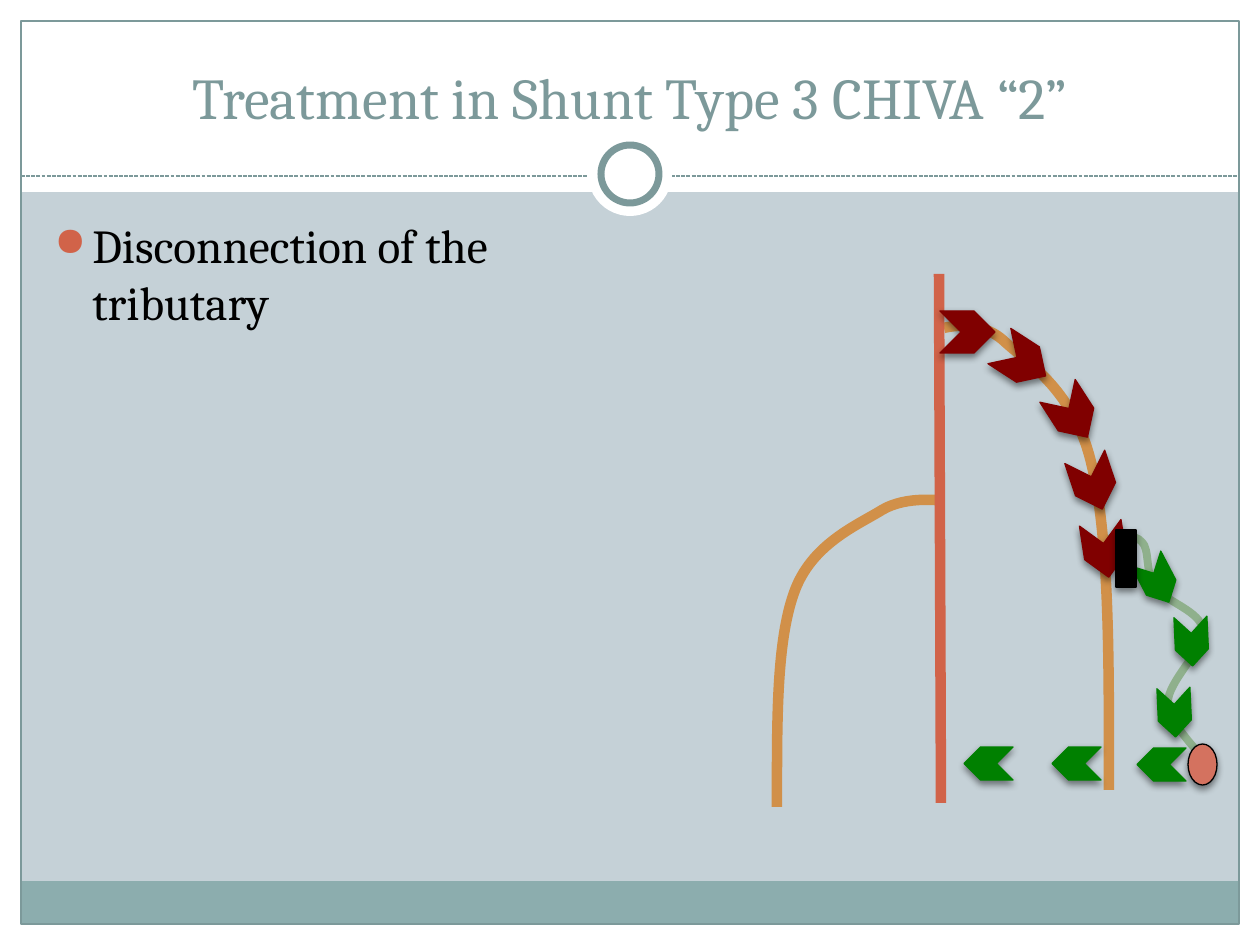
from lxml.etree import SubElement
from pptx import Presentation
from pptx.dml.color import RGBColor
from pptx.enum.dml import MSO_LINE
from pptx.enum.shapes import MSO_CONNECTOR, MSO_SHAPE
from pptx.enum.text import MSO_ANCHOR, PP_ALIGN
from pptx.oxml.ns import qn
from pptx.util import Pt

EMU_PER_PX = 914400 / 126
WIDTH, HEIGHT = 1260, 945
MARGIN = 21

TITLE = "Treatment in Shunt Type 3 CHIVA “2”"
TREATMENT = "Disconnection of the tributary"

PAPER, SLATE, BAND, BACKDROP = "FFFFFF", "7C999A", "8CADAE", "C5D1D7"
VEIN, DEEP_VEIN, TRIBUTARY = "D19049", "D16349", "8FB08C"
BLACK, REFLUX, DRAINAGE, PERFORATOR = "000000", "800000", "008000", "D4725F"

BORDERS = [
    (0, HEIGHT - MARGIN, WIDTH, MARGIN),
    (0, 0, WIDTH, 192),
    (0, 0, MARGIN, HEIGHT),
    (WIDTH - MARGIN, 0, MARGIN, HEIGHT),
]
CURVES = [
    (VEIN, 6, [(777, 807), (777, 725), (776, 643), (794, 593), (811, 544), (858, 525),
               (882, 510), (907, 495), (944, 501), (944, 501)]),
    (TRIBUTARY, 4.5, [(1108, 539), (1120, 537), (1134, 533), (1142, 542), (1150, 549),
                      (1145, 573), (1155, 587), (1166, 602), (1201, 611), (1203, 630),
                      (1205, 649), (1167, 682), (1168, 703), (1169, 726), (1211, 765),
                      (1211, 765)]),
    (VEIN, 6, [(1109, 790), (1109, 667), (1110, 542), (1092, 466), (1075, 391), (1029, 364),
               (1004, 341), (979, 318), (944, 328), (944, 328)]),
]
FLOWS = [
    (REFLUX, (55, 42), [(940, 311, 0), (995, 340, 32.9), (1045, 393, 57.2),
                        (1066, 462, 71.5), (1077, 529, 81.1)]),
    (DRAINAGE, (49, 33), [(1133, 564, 62.5), (1167, 625, 87.4), (1150, 696, 87.4),
                          (1137, 748, 180), (1052, 747, 180), (964, 747, 180)]),
]


def px(length):
    return round(length * EMU_PER_PX)


def rgb(hex_code):
    return RGBColor.from_string(hex_code)


def paint(shape, fill=None, line=None, weight=0.75, shadow=False):
    shape.shadow.inherit = False
    if fill:
        shape.fill.solid()
        shape.fill.fore_color.rgb = rgb(fill)
    else:
        shape.fill.background()
    if line:
        shape.line.color.rgb = rgb(line)
        shape.line.width = Pt(weight)
    else:
        shape.line.fill.background()
    if shadow:
        effects = shape.element.spPr.find(qn("a:effectLst"))
        outer = SubElement(effects, qn("a:outerShdw"), blurRad=str(Pt(4)), dist=str(Pt(2)),
                           dir="5400000", algn="ctr", rotWithShape="0")
        shade = SubElement(outer, qn("a:srgbClr"), val=BLACK)
        SubElement(shade, qn("a:alpha"), val="45000")


def add_box(parent, preset, box, **look):
    shape = parent.add_shape(preset, *map(px, box))
    paint(shape, **look)
    return shape


def add_line(shapes, start, end, color, weight, dash=None):
    line = shapes.add_connector(MSO_CONNECTOR.STRAIGHT, *map(px, start + end))
    line.line.color.rgb = rgb(color)
    line.line.width = Pt(weight)
    if dash:
        line.line.dash_style = dash
    SubElement(line.element.spPr, qn("a:effectLst"))


def add_curve(shapes, points, color, weight):
    builder = shapes.build_freeform(*points[0], scale=EMU_PER_PX)
    builder.add_line_segments(points[1:], close=False)
    curve = builder.convert_to_shape()
    paint(curve, line=color, weight=weight)
    segments = list(curve.element.iter(qn("a:lnTo")))
    outline = segments[0].getparent()
    for first in range(0, len(segments), 3):
        bezier = SubElement(outline, qn("a:cubicBezTo"))
        for segment in segments[first:first + 3]:
            bezier.append(segment[0])
            outline.remove(segment)


def write(shape, text, box, size, color, align=PP_ALIGN.LEFT, anchor=MSO_ANCHOR.TOP,
          line_spacing=None, space_before=0, bullet=None):
    shape.left, shape.top, shape.width, shape.height = map(px, box)
    frame = shape.text_frame
    frame.text = text
    frame.word_wrap = True
    frame.vertical_anchor = anchor
    paragraph = frame.paragraphs[0]
    paragraph.alignment = align
    paragraph.space_before = Pt(space_before)
    if line_spacing:
        paragraph.line_spacing = line_spacing
    font = paragraph.runs[0].font
    font.name, font.size, font.color.rgb = "Cambria", Pt(size), rgb(color)
    if bullet:
        properties = paragraph.runs[0].font and paragraph._p.get_or_add_pPr()
        properties.set("marL", str(px(38)))
        properties.set("indent", str(px(-38)))
        tint = SubElement(properties, qn("a:buClr"))
        SubElement(tint, qn("a:srgbClr"), val=bullet)
        SubElement(properties, qn("a:buSzPct"), val="85000")
        SubElement(properties, qn("a:buChar"), char="●")


def add_frame(shapes):
    for border in BORDERS:
        add_box(shapes, MSO_SHAPE.RECTANGLE, border, fill=PAPER)
    inner = WIDTH - 2 * MARGIN
    add_box(shapes, MSO_SHAPE.RECTANGLE, (MARGIN, 881, inner, 43), fill=BAND)
    add_box(shapes, MSO_SHAPE.RECTANGLE, (MARGIN, MARGIN, inner, HEIGHT - 2 * MARGIN), line=SLATE)
    add_line(shapes, (MARGIN, 176), (WIDTH - MARGIN, 176), SLATE, 0.75, MSO_LINE.SQUARE_DOT)
    for diameter, ring in ((84, None), (58, SLATE)):
        box = (WIDTH / 2 - diameter / 2, 174 - diameter / 2, diameter, diameter)
        add_box(shapes, MSO_SHAPE.OVAL, box, fill=PAPER, line=ring, weight=4)


def add_veins(shapes):
    for color, weight, points in CURVES:
        add_curve(shapes, points, color, weight)
    add_line(shapes, (939, 274), (941, 803), DEEP_VEIN, 6)
    add_box(shapes, MSO_SHAPE.OVAL, (1188, 744, 29, 41), fill=PERFORATOR, line=BLACK, shadow=True)
    for color, size, arrows in FLOWS:
        flow = shapes.add_group_shape().shapes
        for left, top, angle in arrows:
            arrow = add_box(flow, MSO_SHAPE.CHEVRON, (left, top, *size),
                            fill=color, line=color, shadow=True)
            arrow.rotation = angle
    add_box(shapes, MSO_SHAPE.RECTANGLE, (1116, 530, 20, 57), fill=BLACK, line=BLACK, shadow=True)


def main():
    deck = Presentation()
    deck.slide_width, deck.slide_height = px(WIDTH), px(HEIGHT)
    slide = deck.slides.add_slide(deck.slide_layouts[5])
    slide.background.fill.solid()
    slide.background.fill.fore_color.rgb = rgb(BACKDROP)
    shapes = slide.shapes
    add_frame(shapes)
    title = shapes.title
    title.element.getparent().append(title.element)
    write(title, TITLE, (42, 32, 1176, 105), 33, SLATE,
          align=PP_ALIGN.CENTER, anchor=MSO_ANCHOR.BOTTOM)
    write(shapes.add_textbox(0, 0, 0, 0), TREATMENT, (42, 210, 588, 630), 27, BLACK,
          space_before=5.4, bullet=DEEP_VEIN)
    add_veins(shapes)
    deck.save("out.pptx")


if __name__ == "__main__":
    main()
